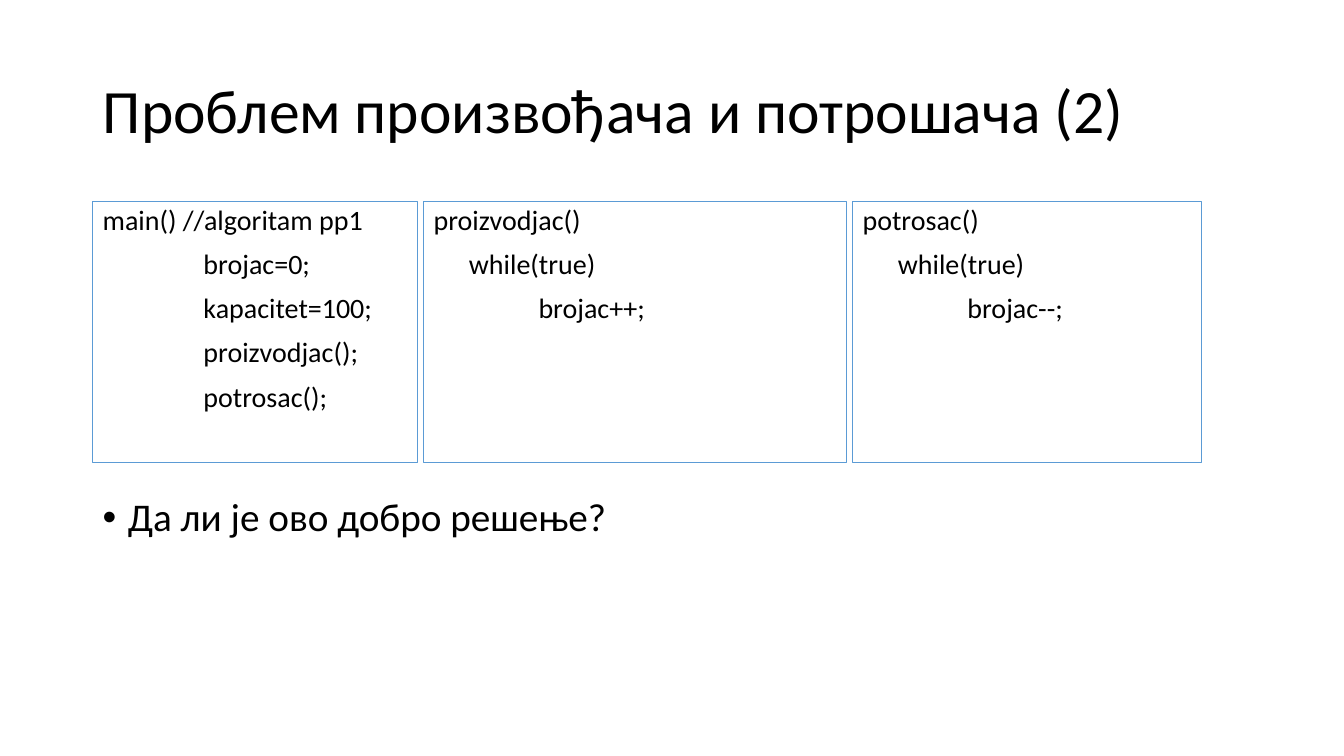
import pptx
import pptx.dml.color
import pptx.enum.shapes
import pptx.enum.text
import pptx.util
from lxml import etree

BLACK = pptx.dml.color.RGBColor(0x00, 0x00, 0x00)
BLUE = pptx.dml.color.RGBColor(0x5B, 0x9B, 0xD5)
FONT = "Calibri"
LEFT, GAP = 6.9, 0.48
PANEL_TOP, PANEL_HEIGHT = 26.6, 34.6
PANELS = [
    (24.15, [("main() //algoritam pp1", 0), ("brojac=0;", 1), ("kapacitet=100;", 1),
             ("proizvodjac();", 1), ("potrosac();", 1)]),
    (31.43, [("proizvodjac()", 0), ("while(true)", 0.35), ("brojac++;", 1.04)]),
    (25.95, [("potrosac()", 0), ("while(true)", 0.35), ("brojac--;", 1.04)]),
]


def write(p, text, size=20, before=10, margin=0, hanging=0, bullet=None):
    p.alignment = pptx.enum.text.PP_ALIGN.LEFT
    p.line_spacing = 0.9
    p.space_before = pptx.util.Pt(before)
    pPr = p._p.get_or_add_pPr()
    pPr.set("marL", str(pptx.util.Inches(margin)))
    pPr.set("indent", str(-pptx.util.Inches(hanging)))
    if bullet:
        font = etree.SubElement(pPr, pptx.oxml.ns.qn("a:buFont"))
        font.set("typeface", "Arial")
        etree.SubElement(pPr, pptx.oxml.ns.qn("a:buChar")).set("char", bullet)
    r = p.add_run()
    r.text = text
    r.font.name = FONT
    r.font.size = pptx.util.Pt(size)
    r.font.color.rgb = BLACK


class Deck:
    def __init__(self):
        self.prs = pptx.Presentation()
        self.prs.slide_width = pptx.util.Inches(13.33)
        self.prs.slide_height = pptx.util.Inches(7.5)
        self.s = self.prs.slides.add_slide(self.prs.slide_layouts[5])

    def place(self, left, top, width, height):
        w, h = self.prs.slide_width, self.prs.slide_height
        return [round(share * side / 100)
                for share, side in zip((left, top, width, height), (w, h, w, h))]

    def title(self, text, *box):
        sp = self.s.shapes.title
        sp.left, sp.top, sp.width, sp.height = self.place(*box)
        tf = sp.text_frame
        tf.vertical_anchor = pptx.enum.text.MSO_ANCHOR.MIDDLE
        tf.auto_size = pptx.enum.text.MSO_AUTO_SIZE.NONE
        write(tf.paragraphs[0], text, size=44, before=0)

    def panel(self, lines, *box):
        sp = self.s.shapes.add_shape(
            pptx.enum.shapes.MSO_SHAPE.RECTANGLE, *self.place(*box))
        sp.shadow.inherit = False
        sp.fill.background()
        sp.line.color.rgb = BLUE
        sp.line.width = pptx.util.Pt(0.75)
        tf = sp.text_frame
        tf.word_wrap = True
        tf.vertical_anchor = pptx.enum.text.MSO_ANCHOR.TOP
        for i, (text, margin) in enumerate(lines):
            p = tf.add_paragraph() if i else tf.paragraphs[0]
            write(p, text, margin=margin)

    def bullet(self, text, *box):
        tf = self.s.shapes.add_textbox(*self.place(*box)).text_frame
        tf.word_wrap = True
        write(tf.paragraphs[0], text, size=28, margin=0.25, hanging=0.25, bullet="•")


def main():
    deck = Deck()
    deck.title("Проблем произвођача и потрошача (2)", LEFT, 5.33, 86.25, 19.33)
    left = LEFT
    for width, lines in PANELS:
        deck.panel(lines, left, PANEL_TOP, width, PANEL_HEIGHT)
        left += width + GAP
    deck.bullet("Да ли је ово добро решење?", LEFT, 65.2, 85.45, 24.93)
    deck.prs.save("out.pptx")


if __name__ == "__main__":
    main()
